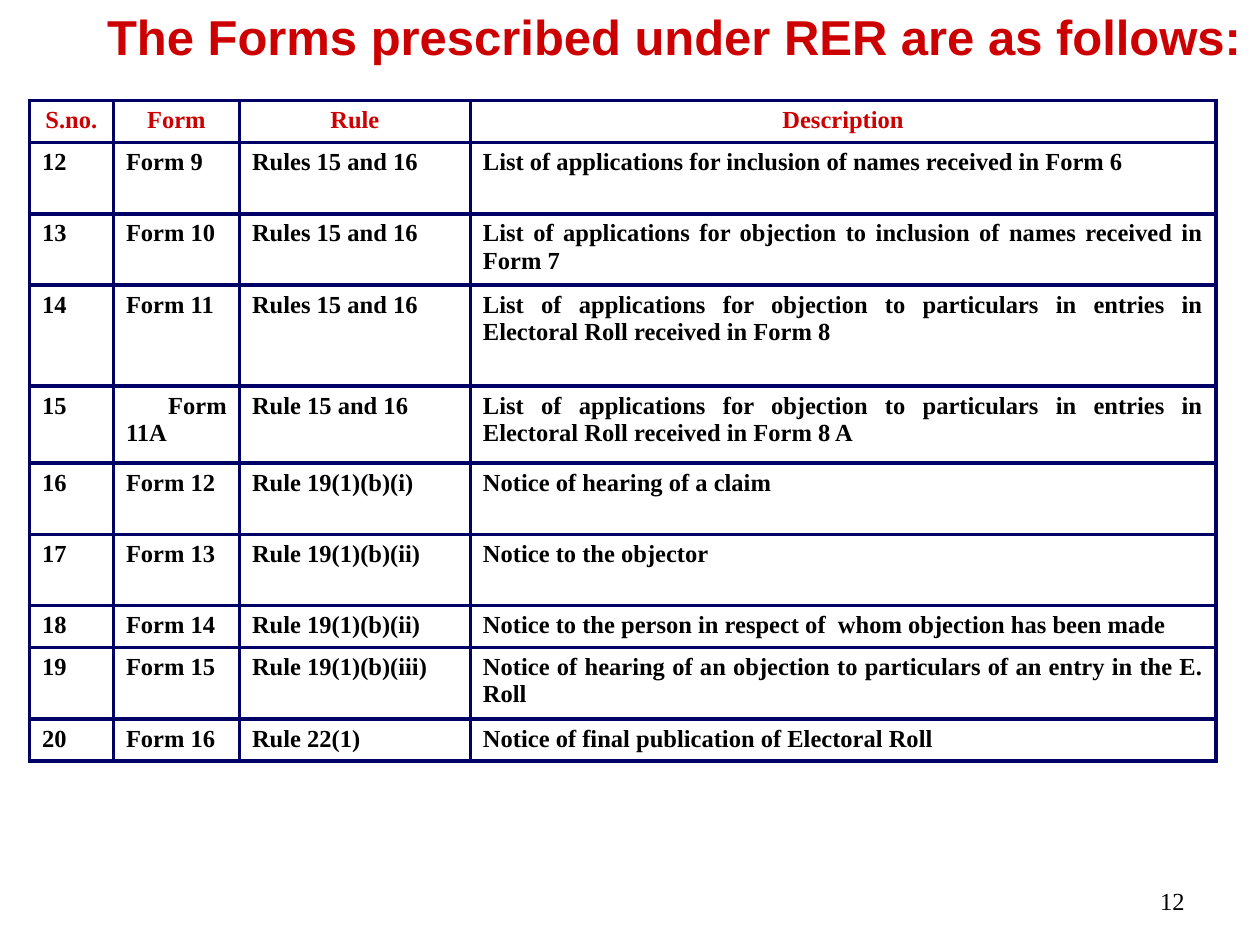
import pptx
import pptx.util
import pptx.dml.color
import pptx.enum.text
import pptx.oxml.ns
from lxml import etree

Pt = pptx.util.Pt
RGBColor = pptx.dml.color.RGBColor
ALIGN = pptx.enum.text.PP_ALIGN
MIDDLE = pptx.enum.text.MSO_ANCHOR.MIDDLE
qn = pptx.oxml.ns.qn

RED = RGBColor(0xCC, 0x00, 0x00)
BLACK = RGBColor(0x00, 0x00, 0x00)
WHITE = RGBColor(0xFF, 0xFF, 0xFF)
NAVY = RGBColor(0x00, 0x00, 0x66)
SERIF = "Times New Roman"

COLUMN_WIDTHS = [48, 72, 132, 426]
ROW_HEIGHTS = [24, 40.8, 40.8, 57.6, 44, 40.8, 40.8, 24, 40.8, 24]
HEADINGS = ["S.no.", "Form", "Rule", "Description"]
FIRST_NUMBER = 12
FORMS = [
    ("Form 9", "Rules 15 and 16",
     "List of applications for inclusion of names received in Form 6"),
    ("Form 10", "Rules 15 and 16",
     "List of applications for objection to inclusion of names received in Form 7"),
    ("Form 11", "Rules 15 and 16",
     "List of applications for objection to particulars in entries in "
     "Electoral Roll received in Form 8"),
    (" Form 11A", "Rule 15 and 16",
     "List of applications for objection to particulars in entries in "
     "Electoral Roll received in Form 8 A"),
    ("Form 12", "Rule 19(1)(b)(i)", "Notice of hearing of a claim"),
    ("Form 13", "Rule 19(1)(b)(ii)", "Notice to the objector"),
    ("Form 14", "Rule 19(1)(b)(ii)",
     "Notice to the person in respect of  whom objection has been made"),
    ("Form 15", "Rule 19(1)(b)(iii)",
     "Notice of hearing of an objection to particulars of an entry in the E. Roll"),
    ("Form 16", "Rule 22(1)", "Notice of final publication of Electoral Roll"),
]


def set_text(frame, text, size, font_name, color, align, bold=False):
    frame.text = text
    frame.word_wrap = True
    paragraph = frame.paragraphs[0]
    paragraph.alignment = align
    font = paragraph.runs[0].font
    font.size, font.name, font.bold = Pt(size), font_name, bold
    font.color.rgb = color


def add_borders(cell, color, width):
    properties = cell._tc.get_or_add_tcPr()
    # Border lines come before the fill in the cell properties
    for position, side in enumerate(("a:lnL", "a:lnR", "a:lnT", "a:lnB")):
        line = etree.Element(qn(side), w=str(Pt(width)))
        fill = etree.SubElement(line, qn("a:solidFill"))
        etree.SubElement(fill, qn("a:srgbClr"), val=str(color))
        properties.insert(position, line)


def add_title(slide, text):
    title = slide.shapes.title
    title.left, title.top, title.width, title.height = Pt(54), Pt(0), Pt(664), Pt(41)
    set_text(title.text_frame, text, 28, "Arial", RED, ALIGN.JUSTIFY, bold=True)
    title.text_frame.vertical_anchor = MIDDLE


def add_forms_table(slide):
    rows = [HEADINGS] + [(str(number), *form)
                         for number, form in enumerate(FORMS, FIRST_NUMBER)]
    table = slide.shapes.add_table(
        len(rows), len(HEADINGS), Pt(16.8), Pt(57.4),
        Pt(sum(COLUMN_WIDTHS)), Pt(sum(ROW_HEIGHTS))).table
    table.first_row = table.horz_banding = False
    for column, width in zip(table.columns, COLUMN_WIDTHS):
        column.width = Pt(width)
    for row, height in zip(table.rows, ROW_HEIGHTS):
        row.height = Pt(height)

    for row_index, row in enumerate(rows):
        color, align = (BLACK, ALIGN.JUSTIFY) if row_index else (RED, ALIGN.CENTER)
        for column_index, text in enumerate(row):
            cell = table.cell(row_index, column_index)
            set_text(cell.text_frame, text, 14, SERIF, color, align, bold=True)
            cell.fill.solid()
            cell.fill.fore_color.rgb = WHITE
            add_borders(cell, NAVY, 2.25)


def add_page_number(slide, number):
    page_number = slide.shapes.add_textbox(Pt(516), Pt(500), Pt(168), Pt(29))
    set_text(page_number.text_frame, number, 14, SERIF, BLACK, ALIGN.RIGHT)
    page_number.text_frame.vertical_anchor = MIDDLE


def main():
    presentation = pptx.Presentation()
    presentation.slide_width, presentation.slide_height = Pt(720), Pt(540)
    slide = presentation.slides.add_slide(presentation.slide_layouts[5])
    add_forms_table(slide)
    add_title(slide, "The Forms prescribed under RER are as follows:")
    add_page_number(slide, "12")
    presentation.save("out.pptx")


if __name__ == "__main__":
    main()
